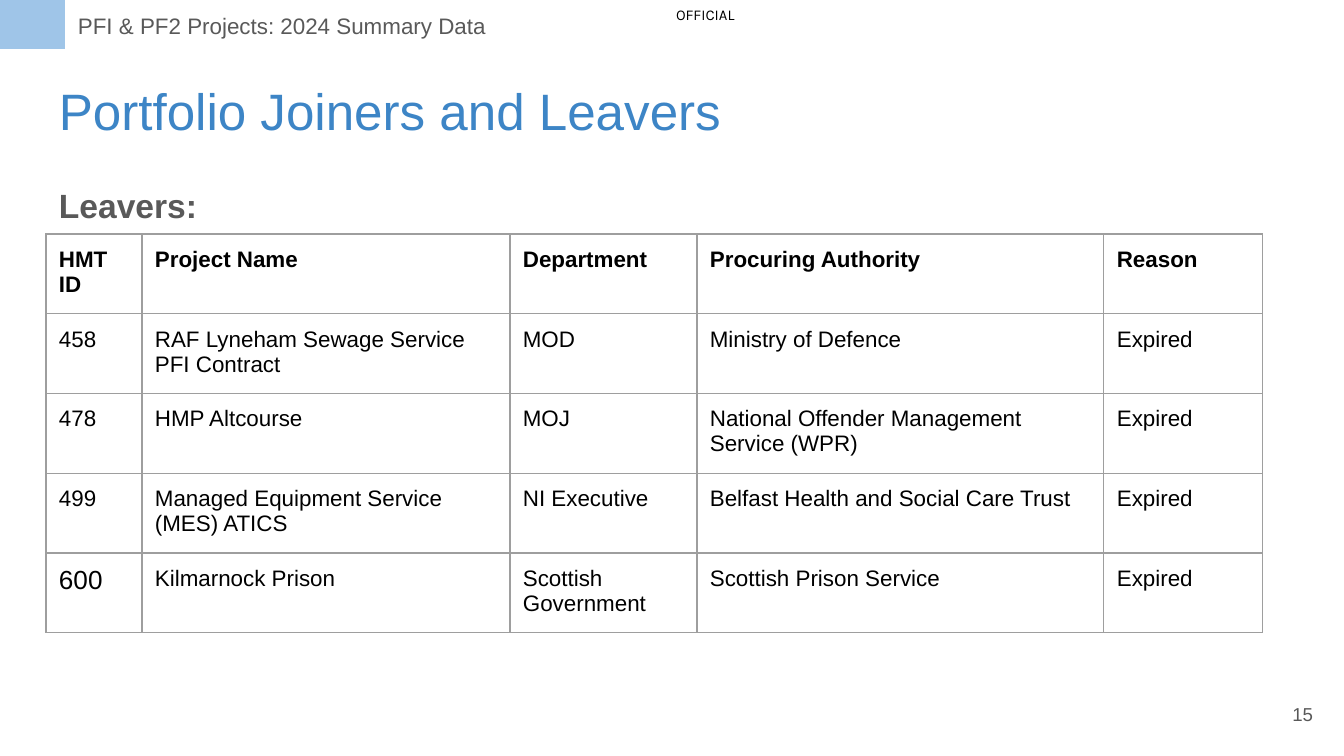
from lxml import etree
from pptx import Presentation
from pptx import util as u
from pptx.dml.color import RGBColor
from pptx.enum import shapes, text
from pptx.oxml.ns import qn

SCALE = 9144000 / 1344  # EMU per px
WIDTH, HEIGHT = 1344, 756
INSET = 13

BLUE, LIGHT_BLUE = "3D85C6", "9FC5E8"
GREY, RULE, BLACK = "595959", "9E9E9E", "000000"

COLUMNS = [96, 368, 187, 407, 159]
ROW_HEIGHT = 77
LEAVERS = [
    ["HMT ID", "Project Name", "Department", "Procuring Authority", "Reason"],
    ["458", "RAF Lyneham Sewage Service PFI Contract", "MOD",
     "Ministry of Defence", "Expired"],
    ["478", "HMP Altcourse", "MOJ",
     "National Offender Management Service (WPR)", "Expired"],
    ["499", "Managed Equipment Service (MES) ATICS", "NI Executive",
     "Belfast Health and Social Care Trust", "Expired"],
    ["600", "Kilmarnock Prison", "Scottish Government",
     "Scottish Prison Service", "Expired"],
]


def px(length):
    return u.Emu(round(length * SCALE))


def color(value):
    return RGBColor.from_string(value)


def write(frame, words, size=12, fill=BLACK, font="Arial", bold=False,
          align=text.PP_ALIGN.LEFT):
    para = frame.paragraphs[0]
    para.alignment = align
    span = para.add_run()
    span.text = words
    span.font.name = font
    span.font.size = u.Pt(size)
    span.font.bold = bold
    span.font.color.rgb = color(fill)


def set_margins(target):
    target.margin_left = target.margin_right = px(INSET)
    target.margin_top = target.margin_bottom = px(INSET)


def draw_borders(cell, fill, width):
    properties = cell._tc.get_or_add_tcPr()
    for side in ("a:lnL", "a:lnR", "a:lnT", "a:lnB"):
        line = etree.SubElement(properties, qn(side), w=str(u.Pt(width)))
        solid = etree.SubElement(line, qn("a:solidFill"))
        etree.SubElement(solid, qn("a:srgbClr"), val=fill)


class SlideBuilder:
    def __init__(self, page):
        self.page = page

    def label(self, words, left, top, width, height,
              anchor=text.MSO_ANCHOR.TOP, **style):
        box = self.page.shapes.add_textbox(px(left), px(top), px(width), px(height))
        frame = box.text_frame
        frame.word_wrap = True
        frame.vertical_anchor = anchor
        set_margins(frame)
        write(frame, words, **style)

    def block(self, left, top, width, height, fill):
        box = self.page.shapes.add_shape(
            shapes.MSO_SHAPE.RECTANGLE, px(left), px(top), px(width), px(height))
        box.shadow.inherit = False
        box.fill.solid()
        box.fill.fore_color.rgb = color(fill)
        box.line.fill.background()

    def table(self, rows, left, top, columns, row_height):
        table = self.page.shapes.add_table(
            len(rows), len(columns), px(left), px(top),
            px(sum(columns)), px(row_height * len(rows))).table
        table.first_row = table.horz_banding = False
        for column, width in zip(table.columns, columns):
            column.width = px(width)
        for r, row in enumerate(rows):
            table.rows[r].height = px(row_height)
            for c, words in enumerate(row):
                cell = table.cell(r, c)
                set_margins(cell)
                draw_borders(cell, RULE, 0.75)
                cell.fill.background()
                write(cell.text_frame, words, bold=r == 0,
                      size=14 if words == "600" else 12)


def main():
    deck = Presentation()
    deck.slide_width, deck.slide_height = px(WIDTH), px(HEIGHT)
    page = deck.slides.add_slide(deck.slide_layouts[6])
    builder = SlideBuilder(page)

    # Title
    builder.label("Portfolio Joiners and Leavers", 46, 66, 1253, 85,
                  size=27.4, fill=BLUE)

    # Header strip
    builder.block(-1, -1, 66, 50, LIGHT_BLUE)
    builder.label("PFI & PF2 Projects: 2024 Summary Data", 65, -1, 496, 50,
                  fill=GREY)

    # Leavers table and its heading
    builder.table(LEAVERS, 46, 234, COLUMNS, ROW_HEIGHT)
    builder.label("Leavers:", 46, 172, 331, 51, size=18, fill=GREY, bold=True)

    # Marking and page number
    builder.label("OFFICIAL", 663, -3, 106, 27, size=8, font="Karla")
    builder.label("15", 1246, 685, 80, 58, anchor=text.MSO_ANCHOR.MIDDLE,
                  size=10, fill=GREY, align=text.PP_ALIGN.RIGHT)

    deck.save("out.pptx")


if __name__ == "__main__":
    main()
